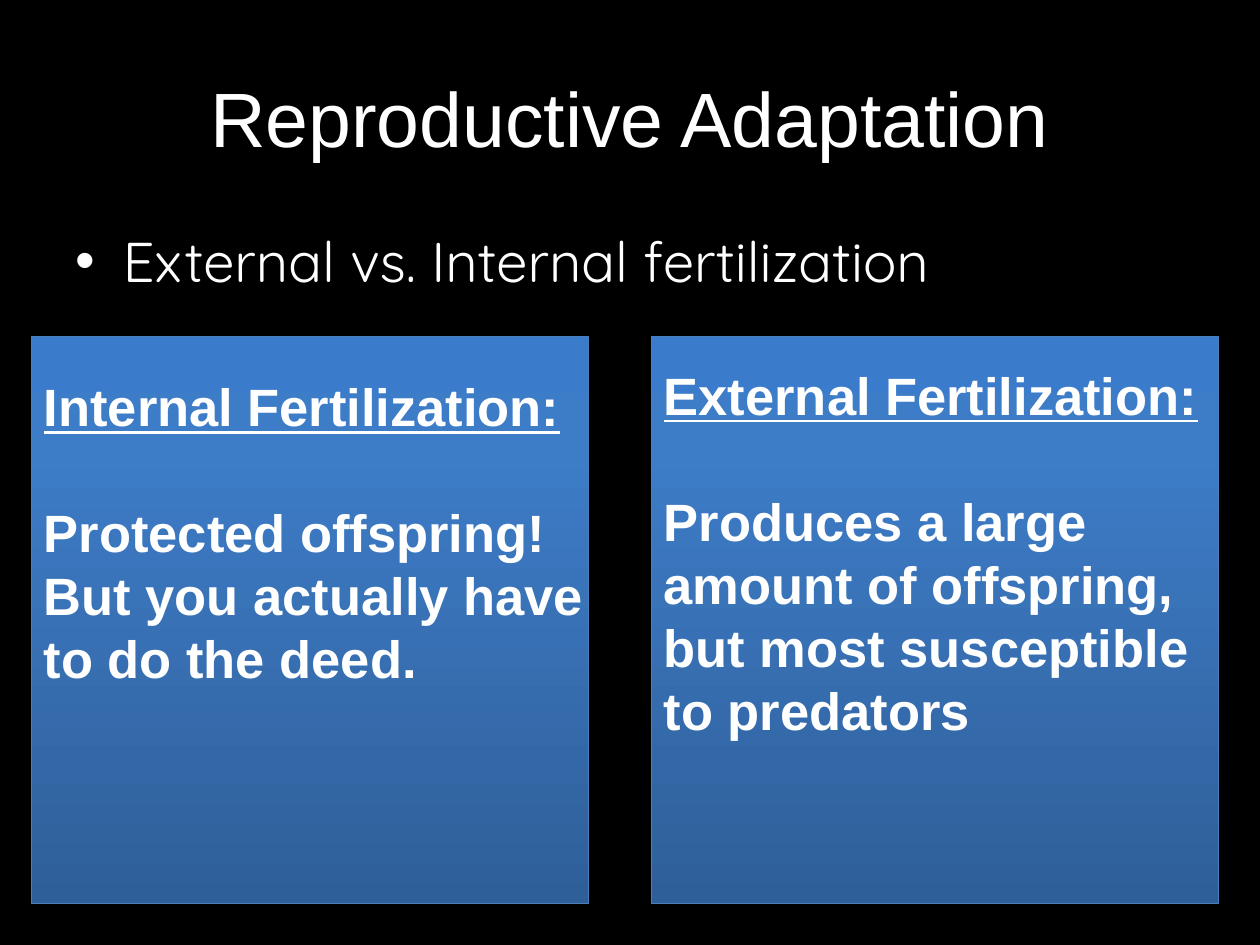
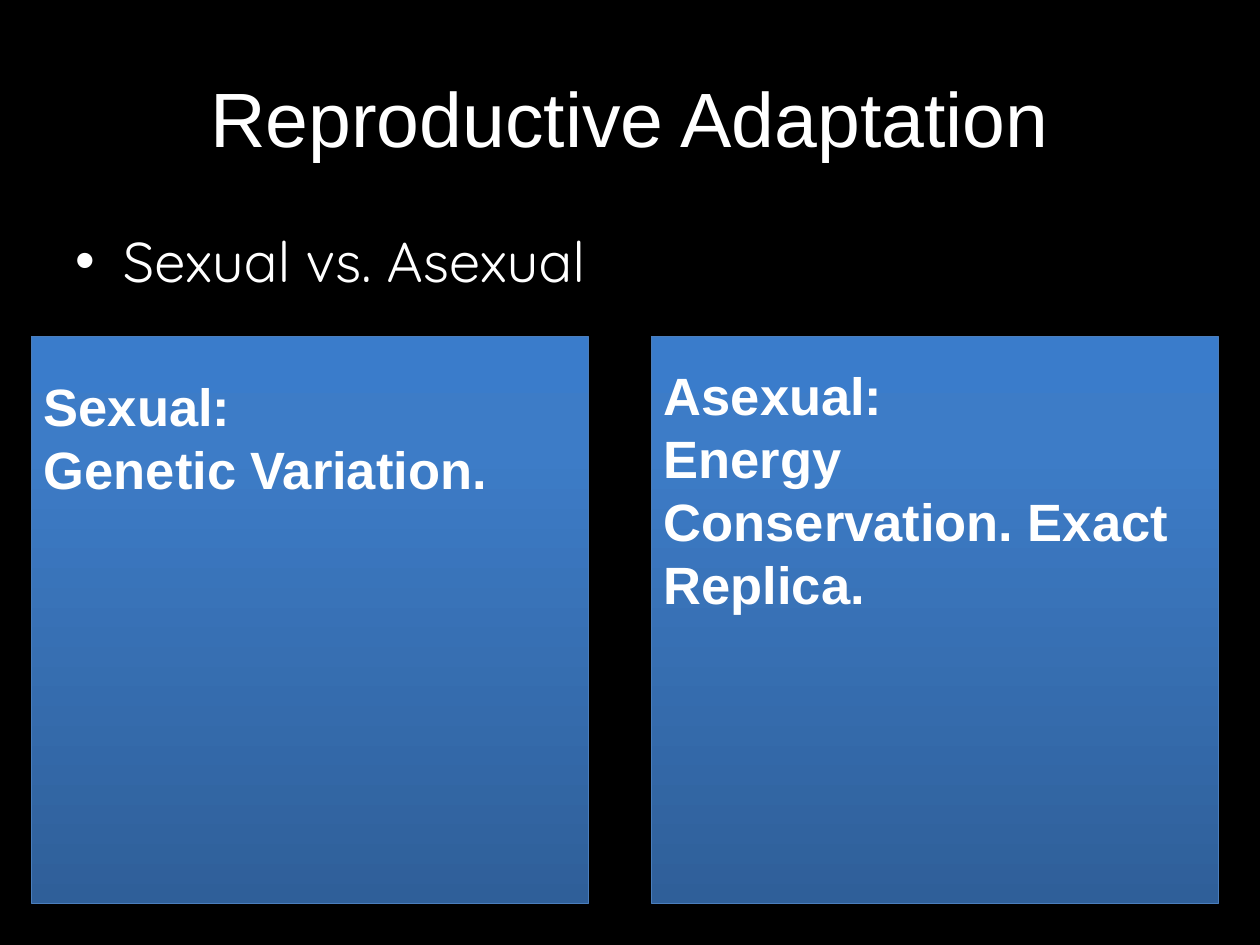
from copy import deepcopy

from pptx import Presentation
from pptx import util as u
from pptx.dml.color import RGBColor
from pptx.enum import shapes, text

TITLE = "Reproductive Adaptation"
COMPARISONS = [
    {
        "topic": "External vs. Internal fertilization",
        "left": ("Internal Fertilization:",
                 "Protected offspring! But you actually have to do the deed."),
        "right": ("External Fertilization:",
                  "Produces a large amount of offspring, but most susceptible to predators"),
        "underlined": True,
        "heights": {"left": 2.62, "right": 3.13},
    },
    {
        "topic": "Sexual vs. Asexual",
        "left": ("Sexual:", "Genetic Variation."),
        "right": ("Asexual:", "Energy Conservation. Exact Replica."),
        "underlined": False,
        "heights": {"left": 1.11, "right": 2.12},
    },
]

BLACK, WHITE, EDGE = "000000", "FFFFFF", "4B7EBC"
PANEL_STOPS = [(0, "2F5F99"), (0.8, "3D7CC7"), (1, "3A7CCB")]
TITLE_FONT = {"name": "Arial", "size": u.Pt(44)}
TOPIC_FONT = {"name": "Quicksand", "size": u.Pt(32)}
NOTE_FONT = {"name": "Arial", "size": u.Pt(30), "bold": True}
LINE_PITCH = u.Pt(36)

TITLE_BOX = (0.5, 0.3, 9, 1.25)
TOPIC_BOX = (0.5, 1.75, 9, 4.95)
PANEL_TOP, PANEL_HEIGHT, NOTE_WIDTH = 2.67, 4.5, 4.5
SIDES = {
    "right": {"x": 5.17, "panel_width": 4.5, "note_top": 2.83},
    "left": {"x": 0.25, "panel_width": 4.42, "note_top": 2.92},
}


def rgb(hex_colour):
    return RGBColor.from_string(hex_colour)


def inches(*lengths):
    return [u.Inches(length) for length in lengths]


def format_font(font, values):
    for name, value in values.items():
        setattr(font, name, value)
    font.color.rgb = rgb(WHITE)


def fill_placeholder(placeholder, words, box, font_values):
    placeholder.left, placeholder.top, placeholder.width, placeholder.height = inches(*box)
    placeholder.text_frame.text = words
    paragraph = placeholder.text_frame.paragraphs[0]
    paragraph.space_before = u.Pt(0)
    format_font(paragraph.runs[0].font, font_values)
    format_font(paragraph.font, font_values)
    return placeholder


def add_panel(slide, side):
    panel = slide.shapes.add_shape(
        shapes.MSO_SHAPE.RECTANGLE,
        *inches(side["x"], PANEL_TOP, side["panel_width"], PANEL_HEIGHT))
    panel.shadow.inherit = False
    panel.line.color.rgb = rgb(EDGE)
    panel.line.width = u.Pt(0.75)
    panel.fill.gradient()
    panel.fill.gradient_angle = 90
    stop_list = panel._element.spPr.find(".//{*}gsLst")
    stop_list.append(deepcopy(stop_list[-1]))
    for stop, (position, colour) in zip(panel.fill.gradient_stops, PANEL_STOPS):
        stop.position = position
        stop.color.rgb = rgb(colour)


def add_note(slide, side, height, heading, statement, underlined):
    """Underlined headings stand one blank line above their statement."""
    note = slide.shapes.add_textbox(
        *inches(side["x"], side["note_top"], NOTE_WIDTH, height))
    frame = note.text_frame
    frame.word_wrap = True
    frame.auto_size = text.MSO_AUTO_SIZE.SHAPE_TO_FIT_TEXT
    frame.text = f"{heading}\n{statement}"
    for paragraph in frame.paragraphs:
        paragraph.line_spacing = LINE_PITCH
        format_font(paragraph.runs[0].font, NOTE_FONT)
    if underlined:
        frame.paragraphs[0].runs[0].font.underline = True
        frame.paragraphs[1].space_before = LINE_PITCH


def add_comparison(deck, comparison):
    slide = deck.slides.add_slide(deck.slide_layouts[1])
    title = fill_placeholder(slide.shapes.title, TITLE, TITLE_BOX, TITLE_FONT)
    title.text_frame.vertical_anchor = text.MSO_ANCHOR.MIDDLE
    title.text_frame.paragraphs[0].alignment = text.PP_ALIGN.CENTER
    fill_placeholder(slide.placeholders[1], comparison["topic"], TOPIC_BOX, TOPIC_FONT)
    for side in SIDES.values():
        add_panel(slide, side)
    for name, side in SIDES.items():
        add_note(slide, side, comparison["heights"][name],
                 *comparison[name], comparison["underlined"])


def main():
    deck = Presentation()
    deck.slide_width, deck.slide_height = inches(10, 7.5)
    background = deck.slide_master.background.fill
    background.solid()
    background.fore_color.rgb = rgb(BLACK)
    for comparison in COMPARISONS:
        add_comparison(deck, comparison)
    deck.save("out.pptx")


if __name__ == "__main__":
    main()
